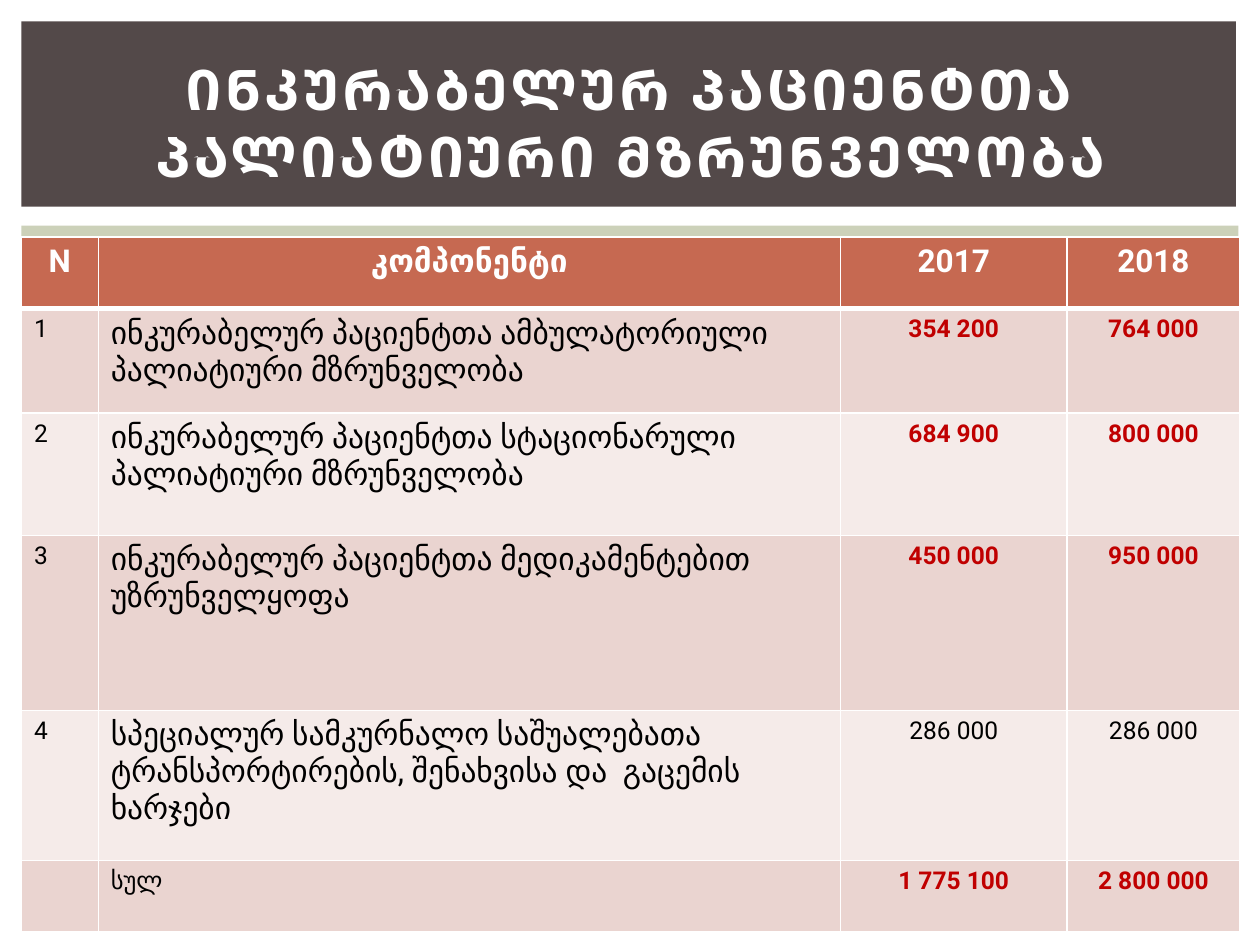
import pptx
import pptx.util
import pptx.oxml
import pptx.dml.color
import pptx.enum.shapes
import pptx.enum.text
from pptx.util import Inches, Pt
from pptx.dml.color import RGBColor
from pptx.enum.text import PP_ALIGN, MSO_ANCHOR

TITLE = "ᲘᲜᲙᲣᲠᲐᲑᲔᲚᲣᲠ ᲞᲐᲪᲘᲔᲜᲢᲗᲐ ᲞᲐᲚᲘᲐᲢᲘᲣᲠᲘ ᲛᲖᲠᲣᲜᲕᲔᲚᲝᲑᲐ"
ROWS = [
    ("N", "კომპონენტი", "2017", "2018"),
    ("1", "ინკურაბელურ პაციენტთა ამბულატორიული პალიატიური მზრუნველობა", "354 200", "764 000"),
    ("2", "ინკურაბელურ პაციენტთა სტაციონარული პალიატიური მზრუნველობა", "684 900", "800 000"),
    ("3", "ინკურაბელურ პაციენტთა მედიკამენტებით უზრუნველყოფა", "450 000", "950 000"),
    ("4", "სპეციალურ სამკურნალო საშუალებათა ტრანსპორტირების, შენახვისა და  გაცემის ხარჯები",
     "286 000", "286 000"),
    ("", "სულ", "1 775 100", "2 800 000"),
]
COL_WIDTHS = [0.61, 5.89, 1.8, 1.37]
ROW_HEIGHTS = [0.57, 0.83, 0.97, 1.39, 1.19, 0.57]
UNCHANGED_ROW = 4
TOTAL_ROW = 5

FONT = "Roboto"
WHITE = RGBColor(0xFF, 0xFF, 0xFF)
BLACK = RGBColor(0, 0, 0)
RED = RGBColor(0xC0, 0, 0)
SAGE = RGBColor(0xCC, 0xD1, 0xB9)
BROWN = RGBColor(0x53, 0x49, 0x49)
RUST = RGBColor(0xC6, 0x69, 0x51)
BANDS = [RGBColor(0xF5, 0xEB, 0xE9), RGBColor(0xEA, 0xD4, 0xD0)]


def add_panel(s, left, top, width, height, color):
    sp = s.shapes.add_shape(pptx.enum.shapes.MSO_SHAPE.RECTANGLE, Inches(left), Inches(top),
                            Inches(width), Inches(height))
    sp.shadow.inherit = False
    sp.fill.solid()
    sp.fill.fore_color.rgb = color
    sp.line.fill.background()


def add_run(p, text, size, color, bold):
    r = p.add_run()
    r.text = text
    r.font.name = FONT
    r.font.size = Pt(size)
    r.font.bold = bold
    r.font.color.rgb = color
    return r


def set_borders(cell, widths):
    tcPr = cell._tc.get_or_add_tcPr()
    for i, (side, width) in enumerate(widths.items()):
        tcPr.insert(i, pptx.oxml.parse_xml(
            f'<a:{side} xmlns:a="http://schemas.openxmlformats.org/drawingml/2006/main" '
            f'w="{Pt(width)}"><a:solidFill><a:srgbClr val="{WHITE}"/></a:solidFill></a:{side}>'))


def cell_style(row, col):
    if row == 0:
        return 18, WHITE, True
    if col >= 2 and row != UNCHANGED_ROW:
        return 14, RED, True
    return (18 if col == 1 and row != TOTAL_ROW else 14), BLACK, False


prs = pptx.Presentation()
prs.slide_width, prs.slide_height = Inches(10), Inches(7.5)
s = prs.slides.add_slide(prs.slide_layouts[6])

add_panel(s, 0.17, 1.79, 9.66, 5.52, SAGE)
add_panel(s, 0.17, 0.17, 9.64, 1.47, BROWN)

table = s.shapes.add_table(len(ROWS), len(COL_WIDTHS), Inches(0.17), Inches(1.88),
                           Inches(sum(COL_WIDTHS)), Inches(sum(ROW_HEIGHTS))).table
for column, width in zip(table.columns, COL_WIDTHS):
    column.width = Inches(width)
for row, height in zip(table.rows, ROW_HEIGHTS):
    row.height = Inches(height)

for i, values in enumerate(ROWS):
    for j, text in enumerate(values):
        cell = table.cell(i, j)
        cell.fill.solid()
        cell.fill.fore_color.rgb = BANDS[i % 2] if i else RUST
        set_borders(cell, {"lnL": 1, "lnR": 1, "lnT": 3 if i == 1 else 1, "lnB": 1 if i else 3})
        p = cell.text_frame.paragraphs[0]
        p.alignment = PP_ALIGN.CENTER if i == 0 or j >= 2 else PP_ALIGN.LEFT
        if text:
            add_run(p, text, *cell_style(i, j))

title = s.shapes.add_textbox(Inches(0.42), Inches(0.39), Inches(9.17), Inches(1.15))
tf = title.text_frame
tf.word_wrap = True
tf.vertical_anchor = MSO_ANCHOR.MIDDLE
p = tf.paragraphs[0]
p.alignment = PP_ALIGN.CENTER
r = add_run(p, TITLE, 32, WHITE, True)
r.font._element.set("spc", "200")

prs.save("out.pptx")
